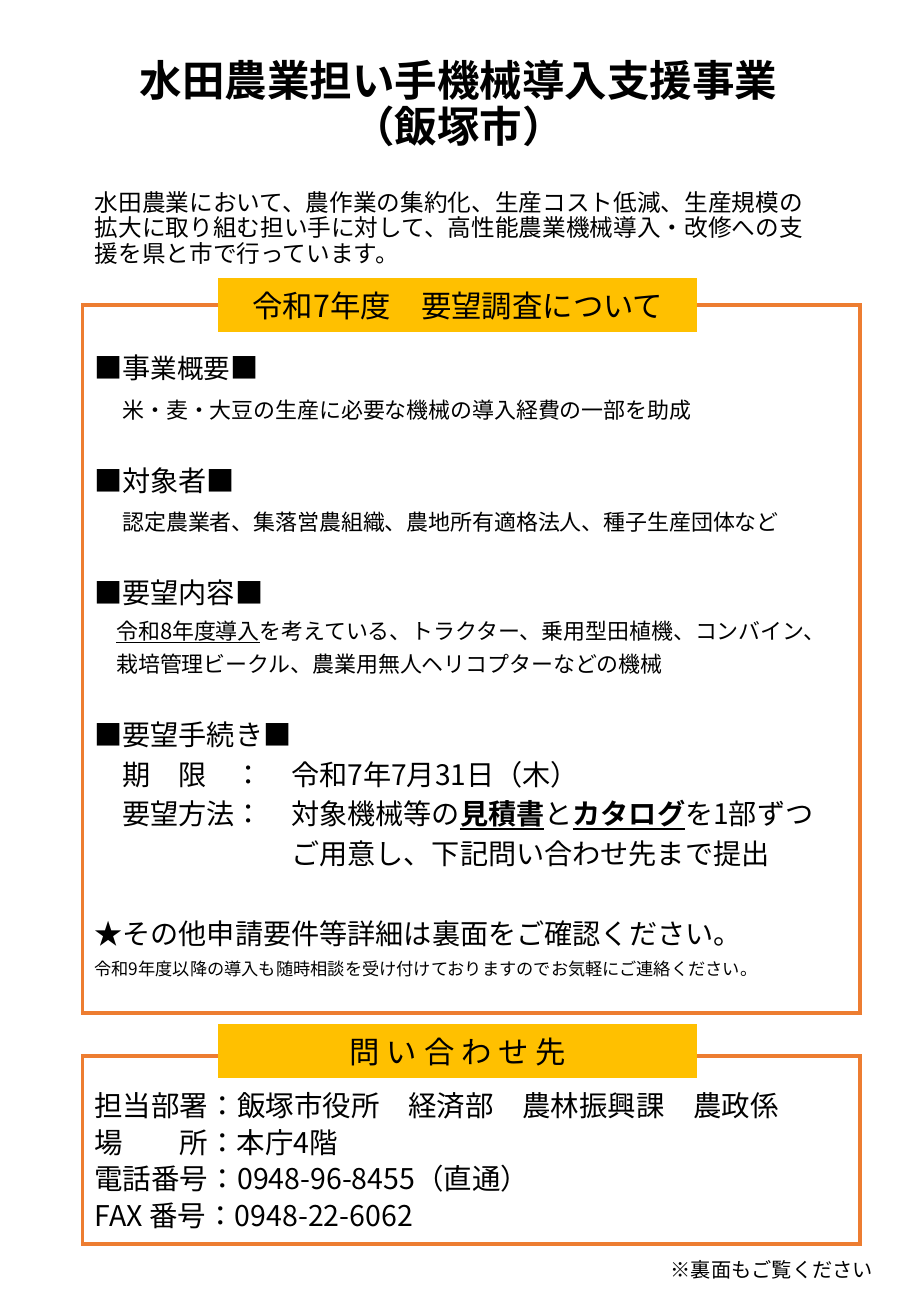
import lxml.etree
import pptx
import pptx.dml.color
import pptx.enum.lang
import pptx.enum.shapes
import pptx.enum.text
import pptx.oxml.ns
import pptx.util

Inches = pptx.util.Inches
Pt = pptx.util.Pt
ALIGN = pptx.enum.text.PP_ALIGN
ANCHOR = pptx.enum.text.MSO_ANCHOR
BLACK = pptx.dml.color.RGBColor(0x00, 0x00, 0x00)
WHITE = pptx.dml.color.RGBColor(0xFF, 0xFF, 0xFF)
ORANGE = pptx.dml.color.RGBColor(0xED, 0x7D, 0x31)
YELLOW = pptx.dml.color.RGBColor(0xFF, 0xC0, 0x00)
FONT = "Noto Sans CJK JP"
qn = pptx.oxml.ns.qn


def write_para(frame, parts, size, spacing=1.0, before=0, align=ALIGN.LEFT):
    """Fill the next paragraph; each part is text, style letters (b, u) and maybe a size."""
    first = frame.paragraphs[0]
    para = first if not first.runs else frame.add_paragraph()
    para.alignment = align
    para.line_spacing = spacing
    para.space_before = Pt(before)
    for text, style, *own_size in parts:
        span = para.add_run()
        span.text = text
        span.font.name = FONT
        span.font.size = Pt(own_size[0] if own_size else size)
        span.font.bold = "b" in style
        span.font.underline = "u" in style
        span.font.color.rgb = BLACK
        span.font.language_id = pptx.enum.lang.MSO_LANGUAGE_ID.JAPANESE
        east_asian = lxml.etree.SubElement(span.font._element, qn("a:ea"))
        east_asian.set("typeface", FONT)
    return para


def add_box(place, fill, line, width, anchor, top_inset):
    """Add a sharp-cornered rectangle and return its text frame."""
    box = page.shapes.add_shape(
        pptx.enum.shapes.MSO_SHAPE.RECTANGLE, *[Inches(v) for v in place])
    box.shadow.inherit = False
    box.fill.solid()
    box.fill.fore_color.rgb = fill
    box.line.color.rgb = line
    box.line.width = Pt(width)
    outline = box._element.spPr.find(qn("a:ln"))
    lxml.etree.SubElement(outline, qn("a:miter"), lim="800000")
    frame = box.text_frame
    frame.word_wrap = True
    frame.vertical_anchor = anchor
    frame.margin_top = Inches(top_inset)
    return frame


deck = pptx.Presentation()
deck.slide_width = Inches(7.5)
deck.slide_height = Inches(10.83)
page = deck.slides.add_slide(deck.slide_layouts[0])

# Title and introduction
title, intro = page.placeholders
for holder, place, anchor in (
        (title, (0.47, 0.56, 6.61, 0.75), ANCHOR.BOTTOM),
        (intro, (0.68, 1.53, 6.18, 0.9), ANCHOR.TOP)):
    holder.left, holder.top, holder.width, holder.height = [Inches(v) for v in place]
    holder.text_frame.word_wrap = True
    holder.text_frame.auto_size = pptx.enum.text.MSO_AUTO_SIZE.NONE
    holder.text_frame.vertical_anchor = anchor
title.text_frame.margin_bottom = Inches(0.06)
intro.text_frame.margin_top = Inches(0.04)
for line in ("水田農業担い手機械導入支援事業", "（飯塚市）"):
    write_para(title.text_frame, [(line, "b")], 25.2, 0.9, align=ALIGN.CENTER)
write_para(intro.text_frame, [(
    "水田農業において、農作業の集約化、生産コスト低減、生産規模の"
    "拡大に取り組む担い手に対して、高性能農業機械導入・改修への支"
    "援を県と市で行っています。", "")], 14, 0.9)

# Survey frame: parts, size, space before, left margin, first-line indent
HEAD, BODY, NOTE = 16.7, 13, 10.2
GAP, ITEM, LINE = 27.8, 10.2, 7.4
survey = [
    ([("■事", ""), ("業概要", "", 15.7), ("■", "")], HEAD, 0, 0, 0),
    ([("米・麦・大豆の生産に必要な機械の導入経費の一部を助成", "")], BODY, ITEM, 0.23, 0),
    ([("■対象者■", "")], HEAD, GAP, 0, 0),
    ([("認定農業者、集落営農組織、農地所有適格法人、種子生産団体など", "")],
     BODY, ITEM, 0.23, 0),
    ([("■要望内容■", "")], HEAD, GAP, 0, 0),
    ([("令和8年度導入", "u"),
      ("を考えている、トラクター、乗用型田植機、コンバイン、", "")], BODY, 8, 0.18, 0),
    ([("栽培管理ビークル、農業用無人ヘリコプターなどの機械", "")], BODY, LINE, 0.18, 0),
    ([("■要望手続き■", "")], HEAD, GAP, 0, 0),
    ([("期　限　：\t令和7年7月31日（木）", "")], HEAD, LINE, 1.62, -1.39),
    ([("要望方法：\t対象機械等の", ""), ("見積書", "bu"), ("と", ""),
      ("カタログ", "bu"), ("を1部ずつ", "")], HEAD, LINE, 1.62, -1.39),
    ([("ご用意し、下記問い合わせ先まで提出", "")], HEAD, LINE, 1.62, 0),
    ([("★その他申請要件等詳細は裏面をご確認ください。", "")], HEAD, 31.4, 0, 0),
    ([("令和9年度以降の導入も随時相談を受け付けておりますのでお気軽にご連絡ください。", "")],
     NOTE, LINE, 0, 0),
]
frame = add_box((0.68, 2.51, 6.4, 5.83), WHITE, ORANGE, 2.25, ANCHOR.TOP, 0.43)
for parts, size, before, margin, indent in survey:
    para = write_para(frame, parts, size, 0.8, before)
    properties = para._p.get_or_add_pPr()
    properties.set("marL", str(Inches(margin)))
    properties.set("indent", str(Inches(indent)))

# Contact frame
contact = ["担当部署：飯塚市役所　経済部　農林振興課　農政係", "場\t所：本庁4階",
           "電話番号：0948-96-8455（直通）", "FAX 番号：0948-22-6062"]
frame = add_box((0.68, 8.69, 6.4, 1.55), WHITE, ORANGE, 2.25, ANCHOR.TOP, 0.34)
for index, line in enumerate(contact):
    para = write_para(frame, [(line, "")], 16.9, 0.7, 7.5 if index else 0)
    if "\t" in line:
        tabs = lxml.etree.SubElement(para._p.get_or_add_pPr(), qn("a:tabLst"))
        lxml.etree.SubElement(tabs, qn("a:tab"), pos=str(Inches(0.7)), algn="l")

# Yellow banners on the top edges of the frames
for top, label in ((2.31, "令和7年度　要望調査について"), (8.45, "問 い 合 わ せ 先")):
    frame = add_box((1.82, top, 3.9, 0.4), YELLOW, YELLOW, 3, ANCHOR.MIDDLE, 0.05)
    write_para(frame, [(label, "")], 18, align=ALIGN.CENTER)

# Footnote
footnote = page.shapes.add_textbox(Inches(5.06), Inches(10.3), Inches(2.59), Inches(0.3))
footnote.text_frame.word_wrap = True
write_para(footnote.text_frame, [("※裏面もご覧ください", "")], 12, align=ALIGN.CENTER)

deck.save("out.pptx")
